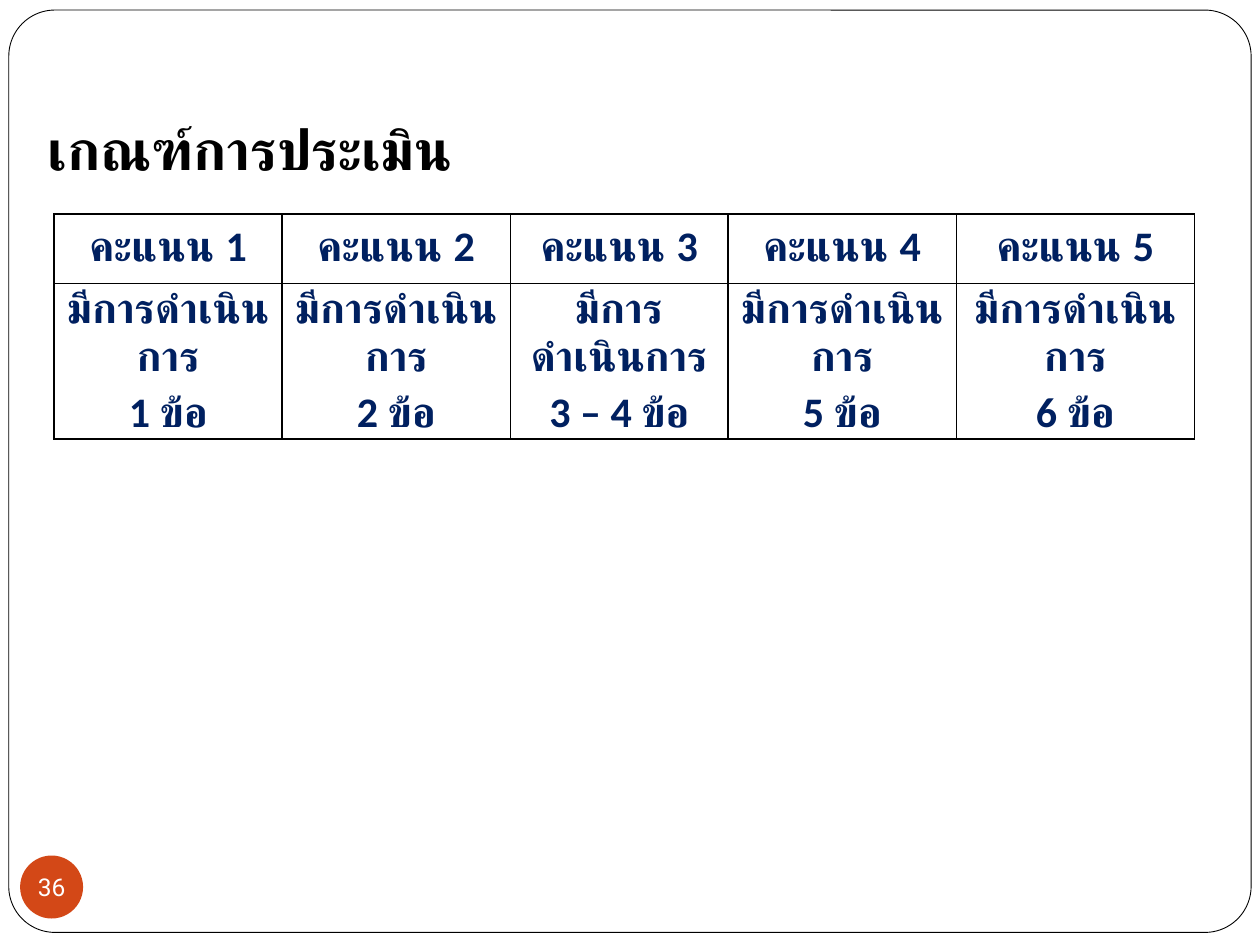
from dataclasses import dataclass

from lxml.etree import SubElement
from pptx import Presentation
from pptx.dml.color import RGBColor
from pptx.enum.shapes import MSO_SHAPE
from pptx.enum.text import MSO_ANCHOR, PP_ALIGN
from pptx.oxml.ns import qn
from pptx.util import Inches, Pt


@dataclass(frozen=True)
class Theme:
    white: RGBColor = RGBColor(0xFF, 0xFF, 0xFF)
    black: RGBColor = RGBColor(0, 0, 0)
    navy: RGBColor = RGBColor(0x00, 0x20, 0x60)
    accent: RGBColor = RGBColor(0xD3, 0x48, 0x17)
    text_font: str = "Calibri"
    number_font: str = "Roboto"
    title_size: Pt = Pt(32)
    table_size: Pt = Pt(24)
    number_size: Pt = Pt(14)


theme = Theme()


def style(paragraph, font_name, size, color, bold, align):
    paragraph.alignment = align
    font = paragraph.font
    font.name, font.size, font.bold = font_name, size, bold
    font.color.rgb = color


def border_cell(cell):
    """Draw a 1 pt line on all four sides of a table cell."""
    properties = cell._tc.get_or_add_tcPr()
    for index, side in enumerate(("a:lnL", "a:lnR", "a:lnT", "a:lnB")):
        line = properties.makeelement(qn(side), {"w": str(Pt(1))})
        properties.insert(index, line)
        fill = SubElement(line, qn("a:solidFill"))
        SubElement(fill, qn("a:srgbClr"), val=str(theme.black))


presentation = Presentation()
presentation.slide_width = Inches(10)
presentation.slide_height = Inches(7.5)
slide = presentation.slides.add_slide(presentation.slide_layouts[5])

# Title
title = slide.shapes.title
title.left, title.top = Inches(0.28), Inches(0.8)
title.width, title.height = Inches(9.45), Inches(0.75)
title.text_frame.text = "เกณฑ์การประเมิน"
title.text_frame.vertical_anchor = MSO_ANCHOR.MIDDLE
style(title.text_frame.paragraphs[0], theme.text_font, theme.title_size,
      theme.black, True, PP_ALIGN.LEFT)

# Rounded page frame, behind the title
frame = slide.shapes.add_shape(MSO_SHAPE.ROUNDED_RECTANGLE, Inches(0.07), Inches(0.08),
                               Inches(9.86), Inches(7.32))
frame.adjustments[0] = 0.05
frame.shadow.inherit = False
frame.fill.solid()
frame.fill.fore_color.rgb = theme.white
frame.line.color.rgb = theme.black
frame.line.width = Pt(0.5)
title._element.addprevious(frame._element)

# Page number
badge = slide.shapes.add_shape(MSO_SHAPE.OVAL, Inches(0.16), Inches(6.79),
                               Inches(0.5), Inches(0.5))
badge.shadow.inherit = False
badge.fill.solid()
badge.fill.fore_color.rgb = theme.accent
badge.line.fill.background()
number = badge.text_frame
number.text = "36"
number.word_wrap = False
number.vertical_anchor = MSO_ANCHOR.MIDDLE
number.margin_left = number.margin_right = number.margin_top = number.margin_bottom = 0
style(number.paragraphs[0], theme.number_font, theme.number_size,
      theme.white, False, PP_ALIGN.CENTER)

# Scores and the number of items each one requires
items_by_score = ["1 ข้อ", "2 ข้อ", "3 – 4 ข้อ", "5 ข้อ", "6 ข้อ"]
column_widths = [1.81, 1.81, 1.73, 1.81, 1.89]
row_heights = [0.55, 1.1]
criteria = slide.shapes.add_table(
    len(row_heights), len(column_widths), Inches(0.43), Inches(1.7),
    Inches(sum(column_widths)), Inches(sum(row_heights))).table
for row, height in zip(criteria.rows, row_heights):
    row.height = Inches(height)

for index, (items, width) in enumerate(zip(items_by_score, column_widths)):
    criteria.columns[index].width = Inches(width)
    for row, wording in enumerate((f"คะแนน {index + 1}", f"มีการดำเนินการ\n{items}")):
        cell = criteria.cell(row, index)
        cell.text = wording
        cell.margin_left = cell.margin_right = Inches(0.07)
        cell.margin_top = cell.margin_bottom = 0
        cell.fill.solid()
        cell.fill.fore_color.rgb = theme.white
        border_cell(cell)
        for paragraph in cell.text_frame.paragraphs:
            paragraph.line_spacing = 1.15
            style(paragraph, theme.text_font, theme.table_size,
                  theme.navy, True, PP_ALIGN.CENTER)

presentation.save("out.pptx")
